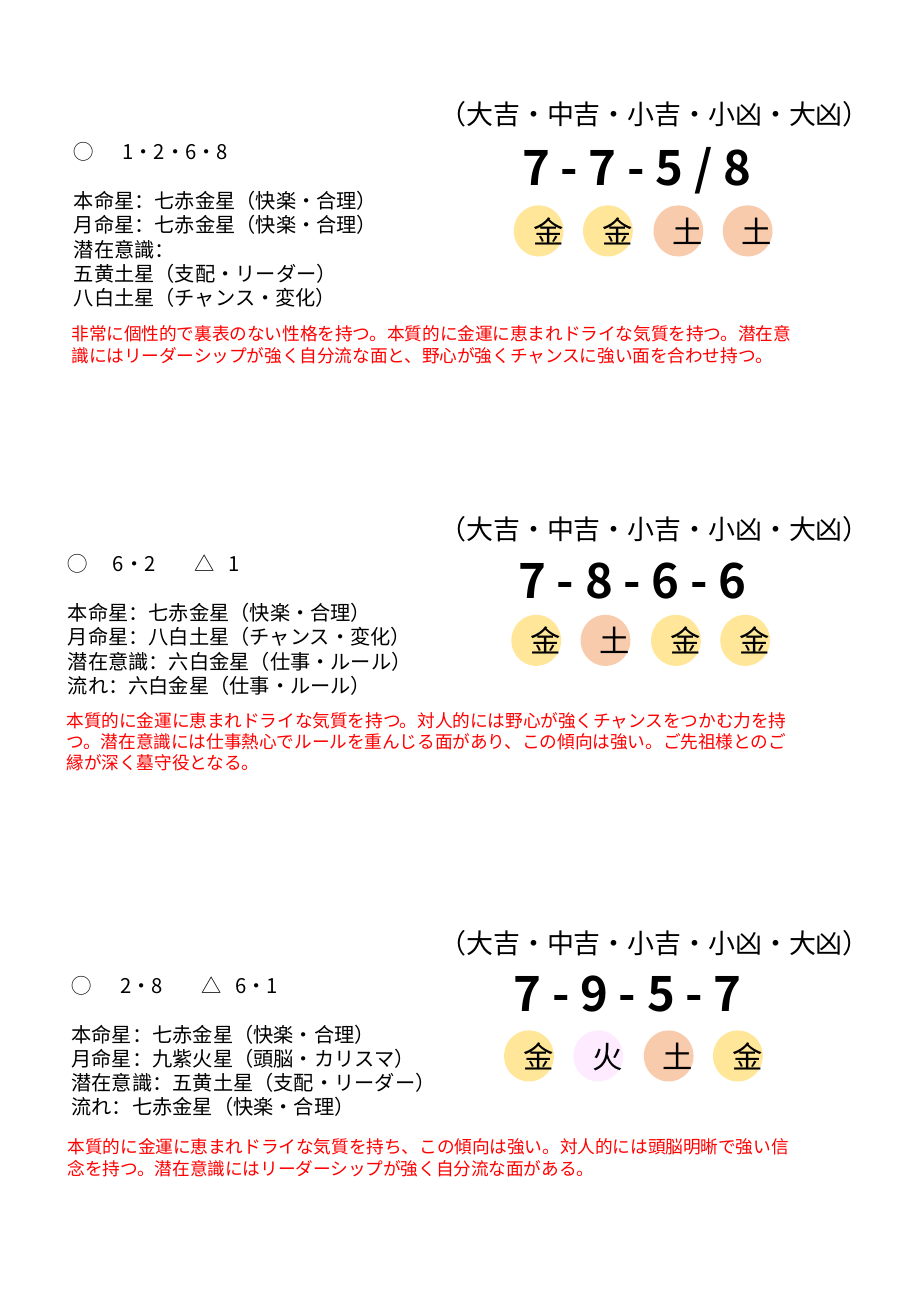
from lxml.etree import SubElement
from pptx import Presentation
from pptx.dml.color import RGBColor
from pptx.enum.shapes import MSO_SHAPE as Shape
from pptx.enum.text import MSO_ANCHOR as Anchor, PP_ALIGN as Align
from pptx.oxml.ns import qn
from pptx.util import Pt

PX = 9144  # 100 px to the inch
FONT = "Noto Sans CJK JP"
RANKS = "（大吉・中吉・小吉・小凶・大凶）"
FILLS = {"金": "FFE699", "土": "F8CBAD", "火": "FEEBFF"}
DOT_STEP = 57.4


def px(*sizes):
    return [round(size) * PX for size in sizes]


def color(code):
    return RGBColor.from_string(code)


def write(frame, *lines, size=12, ink="000000", bold=False, align=Align.LEFT):
    for i, line in enumerate(lines):
        par = frame.paragraphs[0] if i == 0 else frame.add_paragraph()
        par.alignment = align
        par.line_spacing = Pt(size * 1.2)
        run = par.add_run()
        run.text = line
        font = run.font
        font.size, font.bold, font.name = Pt(size), bold, FONT
        font.color.rgb = color(ink)
        SubElement(run._r.get_or_add_rPr(), qn("a:ea"), typeface=FONT)


def label(slide, box, *lines, wrap=True, **form):
    frame = slide.shapes.add_textbox(*px(*box)).text_frame
    frame.word_wrap = wrap
    write(frame, *lines, **form)
    return frame


def set_tabs(par, stops):
    tabs = SubElement(par._p.get_or_add_pPr(), qn("a:tabLst"))
    for stop in px(*stops):
        SubElement(tabs, qn("a:tab"), pos=str(stop), algn="l")


def star_list(slide, box, tab, lines):
    """Lucky numbers on top, then the stars after a gap of one line."""
    first = label(slide, box, *lines).paragraphs[0]
    first.space_after = Pt(14.4)
    set_tabs(first, (tab, tab + 67, tab + 95))


def dots(slide, left, top, signs):
    for i, sign in enumerate(signs):
        box = px(left + i * DOT_STEP, top, 41, 42)
        dot = slide.shapes.add_shape(Shape.OVAL, *box)
        dot.shadow.inherit = False
        dot.fill.solid()
        dot.fill.fore_color.rgb = color(FILLS[sign])
        dot.line.fill.background()
        dot.text_frame.word_wrap = True
        dot.text_frame.vertical_anchor = Anchor.MIDDLE
        write(dot.text_frame, sign, size=18, align=Align.CENTER)


def reading(slide, top, code, code_at, signs, dots_at, stars, stars_at,
            tab, note, note_at):
    """One person's reading; each _at is left and offset from top."""
    def place(at, width, height):
        return at[0], top + at[1], width, height

    label(slide, (352, top, 379, 37), RANKS, size=16, wrap=False)
    star_list(slide, place(stars_at, 365, 20 * len(stars) + 31), tab, stars)
    label(slide, place(code_at, 252, 57), code, size=28, bold=True)
    dots(slide, dots_at[0], top + dots_at[1], signs)
    label(slide, place(note_at, 626, 45), note, size=10.5, ink="FF0000")


READINGS = [
    dict(top=75, code="7 - 7 - 5 / 8", code_at=(420, 34),
         signs="金金土土", dots_at=(423, 94),
         stars=["◯\t1・2・6・8", "本命星：七赤金星（快楽・合理）",
                "月命星：七赤金星（快楽・合理）", "潜在意識：",
                "五黄土星（支配・リーダー）", "八白土星（チャンス・変化）"],
         stars_at=(51, 35), tab=40, note_at=(49, 186),
         note="非常に個性的で裏表のない性格を持つ。本質的に金運に恵まれドライな気質を持つ。"
              "潜在意識にはリーダーシップが強く自分流な面と、野心が強くチャンスに強い面を合わせ持つ。"),
    dict(top=417, code="7 - 8 - 6 - 6", code_at=(417, 32),
         signs="金土金金", dots_at=(421, 89),
         stars=["◯\t6・2\t△\t1", "本命星：七赤金星（快楽・合理）",
                "月命星：八白土星（チャンス・変化）",
                "潜在意識：六白金星（仕事・ルール）", "流れ：六白金星（仕事・ルール）"],
         stars_at=(46, 32), tab=37, note_at=(45, 162),
         note="本質的に金運に恵まれドライな気質を持つ。対人的には野心が強くチャンスをつかむ力を持つ。"
              "潜在意識には仕事熱心でルールを重んじる面があり、この傾向は強い。"
              "ご先祖様とのご縁が深く墓守役となる。"),
    dict(top=758, code="7 - 9 - 5 - 7", code_at=(413, 31),
         signs="金火土金", dots_at=(415, 90),
         stars=["◯\t2・8\t△\t6・1", "本命星：七赤金星（快楽・合理）",
                "月命星：九紫火星（頭脳・カリスマ）",
                "潜在意識：五黄土星（支配・リーダー）", "流れ：七赤金星（快楽・合理）"],
         stars_at=(49, 38), tab=40, note_at=(46, 172),
         note="本質的に金運に恵まれドライな気質を持ち、この傾向は強い。"
              "対人的には頭脳明晰で強い信念を持つ。"
              "潜在意識にはリーダーシップが強く自分流な面がある。"),
]


def main():
    deck = Presentation()
    deck.slide_width, deck.slide_height = px(750, 1083)
    slide = deck.slides.add_slide(deck.slide_layouts[6])
    for item in READINGS:
        reading(slide, **item)
    deck.save("out.pptx")


if __name__ == "__main__":
    main()
